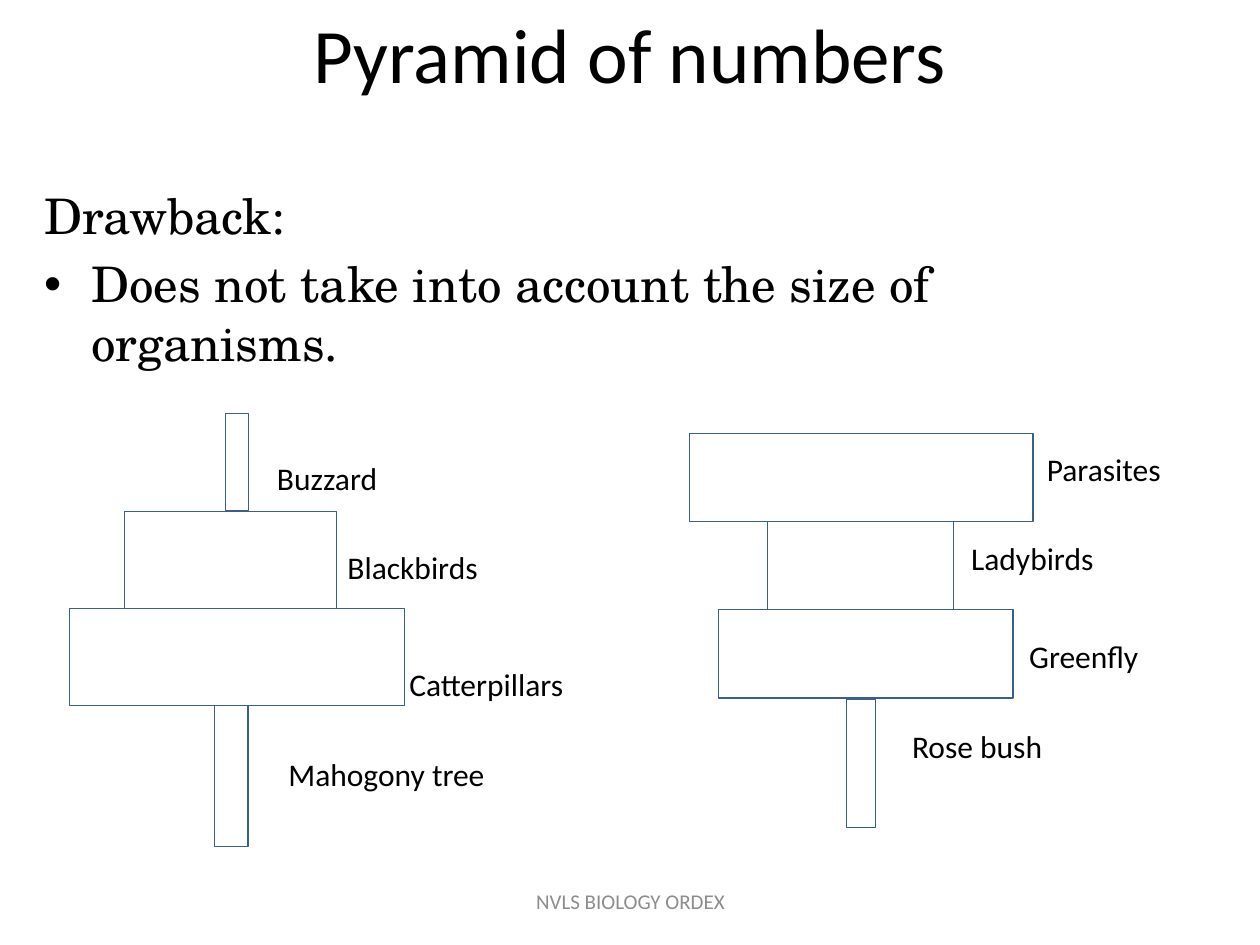
from dataclasses import dataclass

from lxml.etree import SubElement
from pptx import Presentation
from pptx.dml.color import RGBColor
from pptx.enum.shapes import MSO_SHAPE
from pptx.enum.text import MSO_ANCHOR, PP_ALIGN
from pptx.oxml.ns import qn
from pptx.util import Emu, Pt

EMU_PER_PX = 9144
SANS = "Calibri"
SERIF = "TeX Gyre Schola"
BLACK = "000000"
OUTLINE = "3A5F8C"
GREY = "8C8C8C"


@dataclass(frozen=True)
class Box:
    left: int
    top: int
    width: int
    height: int


@dataclass(frozen=True)
class Level:
    organism: str
    bar: Box
    label: Box


MAHOGANY_PYRAMID = [
    Level("Mahogony tree", Box(170, 560, 27, 112), Box(219, 594, 189, 40)),
    Level("Catterpillars", Box(55, 483, 266, 77), Box(315, 523, 162, 40)),
    Level("Blackbirds", Box(99, 406, 168, 77), Box(266, 430, 144, 40)),
    Level("Buzzard", Box(179, 328, 18, 77), Box(210, 359, 120, 40)),
]
ROSE_PYRAMID = [
    Level("Rose bush", Box(672, 555, 23, 102), Box(714, 572, 141, 40)),
    Level("Greenfly", Box(570, 484, 234, 70), Box(807, 501, 123, 40)),
    Level("Ladybirds", Box(609, 414, 148, 70), Box(761, 423, 137, 40)),
    Level("Parasites", Box(547, 344, 273, 70), Box(821, 352, 132, 40)),
]


def px(length: int) -> Emu:
    return Emu(length * EMU_PER_PX)


def color(hex_value: str) -> RGBColor:
    return RGBColor.from_string(hex_value)


def bounds(box: Box) -> tuple[Emu, Emu, Emu, Emu]:
    return px(box.left), px(box.top), px(box.width), px(box.height)


def place(placeholder, box: Box) -> None:
    (placeholder.left, placeholder.top,
     placeholder.width, placeholder.height) = bounds(box)


def add_run(paragraph, text: str, size: int, font: str = SANS, hex_value: str = BLACK) -> None:
    run = paragraph.add_run()
    run.text = text
    run.font.size = Pt(size)
    run.font.name = font
    run.font.color.rgb = color(hex_value)


def add_caption(slide, box: Box):
    frame = slide.shapes.add_textbox(*bounds(box)).text_frame
    frame.word_wrap = True
    return frame


def draw_pyramid(slide, levels: list[Level]) -> None:
    pyramid = slide.shapes.add_group_shape()
    for level in levels:
        bar = pyramid.shapes.add_shape(MSO_SHAPE.RECTANGLE, *bounds(level.bar))
        bar.shadow.inherit = False
        bar.fill.background()
        bar.line.color.rgb = color(OUTLINE)
        bar.line.width = Pt(0.75)
    for level in levels:
        label = add_caption(slide, level.label)
        add_run(label.paragraphs[0], level.organism, 18)


def main() -> None:
    deck = Presentation()
    deck.slide_width, deck.slide_height = px(1000), px(750)
    slide = deck.slides.add_slide(deck.slide_layouts[1])

    title = slide.shapes.title
    place(title, Box(0, 0, 1000, 83))
    heading = title.text_frame.paragraphs[0]
    heading.alignment = PP_ALIGN.CENTER
    add_run(heading, "Pyramid of numbers", 44)

    body = slide.placeholders[1]
    place(body, Box(25, 142, 900, 495))
    drawback = body.text_frame.paragraphs[0]
    SubElement(drawback._p.get_or_add_pPr(), qn("a:buNone"))
    add_run(drawback, "Drawback:", 28, SERIF)
    explanation = body.text_frame.add_paragraph()
    add_run(explanation, "Does not take into account the size of organisms.", 28, SERIF)

    for levels in (MAHOGANY_PYRAMID, ROSE_PYRAMID):
        draw_pyramid(slide, levels)

    footer = add_caption(slide, Box(342, 695, 317, 40))
    footer.vertical_anchor = MSO_ANCHOR.MIDDLE
    footer.paragraphs[0].alignment = PP_ALIGN.CENTER
    add_run(footer.paragraphs[0], "NVLS BIOLOGY ORDEX", 12, SANS, GREY)

    deck.save("out.pptx")


if __name__ == "__main__":
    main()
